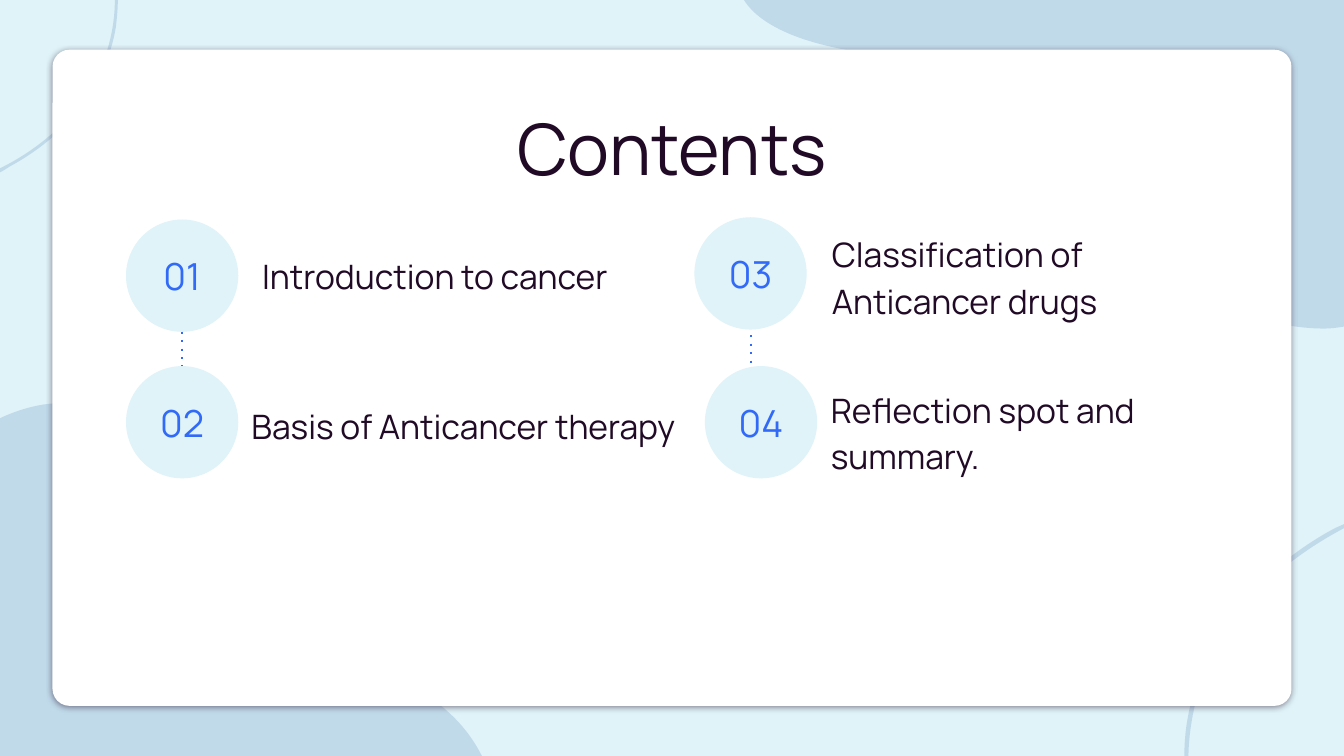
from lxml import etree
from pptx import Presentation
from pptx.dml.color import RGBColor
from pptx.enum.shapes import MSO_CONNECTOR, MSO_SHAPE
from pptx.enum.text import MSO_ANCHOR, MSO_AUTO_SIZE, PP_ALIGN
from pptx.oxml import parse_xml
from pptx.oxml.ns import qn
from pptx.util import Pt

ELLIPSE, ROUNDED = MSO_SHAPE.OVAL, MSO_SHAPE.ROUNDED_RECTANGLE
TOP, MIDDLE = MSO_ANCHOR.TOP, MSO_ANCHOR.MIDDLE
LEFT, CENTER = PP_ALIGN.LEFT, PP_ALIGN.CENTER
STRAIGHT = MSO_CONNECTOR.STRAIGHT
FONT = "Manrope"
PALE = RGBColor(0xDF, 0xF3, 0xF8)
WAVE = RGBColor(0xA0, 0xBF, 0xDB)
WHITE = RGBColor(0xFF, 0xFF, 0xFF)
DARK = RGBColor(0x21, 0x0A, 0x26)
BLUE = RGBColor(0x31, 0x69, 0xF8)


def write_text(sp, text, size=24, color=DARK, align=LEFT, anchor=MIDDLE, spacing=1.15):
    tf = sp.text_frame
    tf.word_wrap = True
    tf.auto_size = MSO_AUTO_SIZE.NONE
    tf.vertical_anchor = anchor
    tf.margin_left = tf.margin_right = tf.margin_top = tf.margin_bottom = Pt(9.6)
    p = tf.paragraphs[0]
    p.alignment = align
    p.line_spacing = spacing
    p.space_before = Pt(0)
    r = p.add_run()
    r.text = text
    r.font.name = FONT
    r.font.size = Pt(size)
    r.font.color.rgb = color


def bend(sp, segments):
    """Turn each line whose segment has 6 numbers into a cubic curve."""
    for line, seg in zip(list(sp.element.iter(qn("a:lnTo"))), segments):
        if len(seg) == 6:
            curve = etree.Element(qn("a:cubicBezTo"))
            for x, y in zip(seg[::2], seg[1::2]):
                pt = etree.SubElement(curve, qn("a:pt"))
                pt.set("x", str(Pt(x) - sp.left))
                pt.set("y", str(Pt(y) - sp.top))
            line.getparent().replace(line, curve)


prs = Presentation()
prs.slide_width, prs.slide_height = Pt(960), Pt(540)
s = prs.slides.add_slide(prs.slide_layouts[5])
s.background.fill.solid()
s.background.fill.fore_color.rgb = PALE

# Background waves: start point, then lines (2 numbers) and curves (6 numbers)
WAVES = [
    ((848.9, 540), [(849.6, 505.4, 861.1, 470.2, 882, 442.1),
                    (902.2, 414, 931.5, 392.4, 960, 377.3),
                    (960, 374.4),
                    (956.9, 375.8, 953.3, 377.3, 949.7, 379.4),
                    (925.2, 393.1, 902.2, 411.8, 884.2, 434.2),
                    (866.2, 457.9, 853.2, 484.6, 848.2, 514.1),
                    (846.7, 522.7, 846, 531.4, 846, 540)]),
    ((43.2, 288), [(20.9, 288, 0, 298.8, 0, 298.8),
                   (0, 540), (344.2, 540),
                   (300.2, 452.9, 164.2, 469.4, 107.3, 452.2),
                   (51.1, 435.6, 113, 352.1, 82.8, 307.4),
                   (72, 292.3, 57.6, 288, 43.2, 288)]),
    ((531.4, 0), [(547.2, 25.2, 599, 41.8, 683.3, 41.8),
                  (686.2, 41.8, 689.8, 41.8, 692.6, 41.8),
                  (694.1, 41.8, 694.8, 41.8, 696.2, 41.8),
                  (822.2, 41.8, 769.7, 153.4, 863.3, 211.7),
                  (888.5, 227.5, 920.9, 234.7, 946.1, 234.7),
                  (951.1, 234.7, 955.4, 234, 960, 233.3),
                  (960, 0)]),
    ((82.1, 0), [(82.1, 25.9, 73.4, 51.8, 58.3, 72.7),
                 (43.2, 92.9, 22.3, 109.4, 0, 120.2),
                 (0, 123.1),
                 (2.9, 121.7, 5, 120.2, 7.2, 118.8),
                 (25.9, 108.7, 43.2, 95, 56.2, 78.5),
                 (69.8, 61.2, 79.2, 41, 82.8, 19.4),
                 (83.5, 13, 84.2, 6.5, 84.2, 0)]),
]
for (x, y), segments in WAVES:
    fb = s.shapes.build_freeform(Pt(x), Pt(y))
    fb.add_line_segments([(Pt(seg[-2]), Pt(seg[-1])) for seg in segments], close=True)
    sp = fb.convert_to_shape()
    bend(sp, segments)
    sp.shadow.inherit = False
    sp.fill.solid()
    sp.fill.fore_color.rgb = WAVE
    sp.line.fill.background()
    color = sp.element.spPr.find(qn("a:solidFill"))[0]
    etree.SubElement(color, qn("a:alpha")).set("val", "48000")

# White card with a soft shadow
card = s.shapes.add_shape(ROUNDED, Pt(37.5), Pt(35.5), Pt(885), Pt(468.7))
card.adjustments[0] = 0.026
card.fill.solid()
card.fill.fore_color.rgb = WHITE
card.line.fill.background()
card.element.spPr.append(parse_xml(
    '<a:effectLst xmlns:a="http://schemas.openxmlformats.org/drawingml/2006/main">'
    f'<a:outerShdw blurRad="{Pt(4.5)}" dist="{Pt(1.5)}" dir="5400000" algn="bl" rotWithShape="0">'
    f'<a:srgbClr val="{DARK}"><a:alpha val="50000"/></a:srgbClr>'
    '</a:outerShdw></a:effectLst>'))

# Title, placed in front of the card
title = s.shapes.title
title.left, title.top, title.width, title.height = Pt(75), Pt(56), Pt(810), Pt(75)
write_text(title, "Contents", size=50.6, align=CENTER, anchor=TOP)
card.element.addnext(title.element)

# Numbered items: circle position, then text box
DIAMETER = 80.2
ITEMS = [
    ("Introduction to cancer", (90, 156.8), (177.6, 155.2, 318.2, 80)),
    ("Basis of Anticancer therapy", (90, 261.5), (170, 255.6, 341.3, 92.9)),
    ("Classification of Anticancer drugs", (496, 155.2), (584.6, 149, 310.3, 94.3)),
    ("Reflection spot and summary.", (503.5, 261.5), (583.8, 267.1, 334.8, 80)),
]
for number, (text, (x, y), box) in enumerate(ITEMS, 1):
    tb = s.shapes.add_textbox(*[Pt(v) for v in box])
    write_text(tb, text)
    sp = s.shapes.add_shape(ELLIPSE, Pt(x), Pt(y), Pt(DIAMETER), Pt(DIAMETER))
    sp.shadow.inherit = False
    sp.fill.solid()
    sp.fill.fore_color.rgb = PALE
    sp.line.fill.background()
    write_text(sp, f"{number:02}", size=26.6, color=BLUE, align=CENTER, spacing=1.0)

# Dotted links between the circles
for x, top, bottom in [(130.1, 237, 261.5), (536.3, 239.5, 260)]:
    link = s.shapes.add_connector(STRAIGHT, Pt(x), Pt(top), Pt(x), Pt(bottom))
    link.line.color.rgb = BLUE
    link.line.width = Pt(1.5)
    spPr = link.element.spPr
    etree.SubElement(spPr.find(qn("a:ln")), qn("a:prstDash")).set("val", "dot")
    etree.SubElement(spPr, qn("a:effectLst"))

prs.save("out.pptx")
